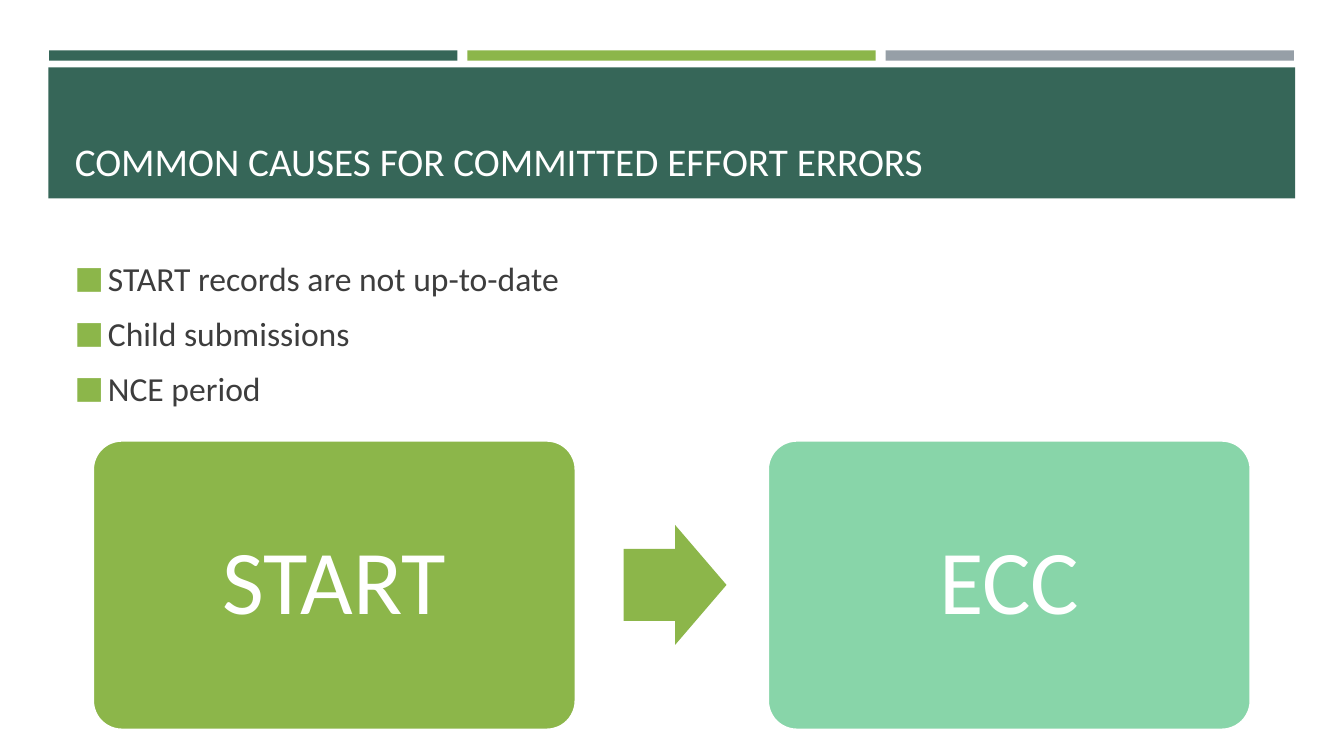
"""Build the slide on common causes for committed effort errors."""
from dataclasses import dataclass

from lxml.etree import SubElement
from pptx import Presentation
from pptx.dml.color import RGBColor
from pptx.enum.shapes import MSO_SHAPE
from pptx.enum.text import MSO_ANCHOR, MSO_AUTO_SIZE, PP_ALIGN
from pptx.oxml.ns import qn
from pptx.slide import Slide
from pptx.text.text import Font, _Paragraph
from pptx.util import Cm, Pt

DARK_GREEN = RGBColor(0x36, 0x66, 0x58)
LEAF_GREEN = RGBColor(0x8C, 0xB6, 0x4A)
MINT = RGBColor(0x88, 0xD5, 0xA9)
GRAY = RGBColor(0x96, 0x9F, 0xA7)
TEXT_GRAY = RGBColor(0x3D, 0x3D, 0x3D)
WHITE = RGBColor(0xFF, 0xFF, 0xFF)

FONT_NAME = "Calibri"
CAUSES = ["START records are not up-to-date", "Child submissions", "NCE period"]
BAR_COLORS = [DARK_GREEN, LEAF_GREEN, GRAY]
BAR_LEFT, BAR_PITCH = 1.24, 10.54


@dataclass(frozen=True)
class Block:
    """A filled shape, measured in centimetres, with an optional label."""

    left: float
    top: float
    width: float
    height: float
    fill: RGBColor
    kind: MSO_SHAPE = MSO_SHAPE.RECTANGLE
    adjustments: tuple[float, ...] = ()
    label: str = ""


BARS = [
    Block(BAR_LEFT + index * BAR_PITCH, 1.27, 10.29, 0.26, color)
    for index, color in enumerate(BAR_COLORS)
]
BAND = Block(1.22, 1.7, 31.42, 3.3, DARK_GREEN)
CARDS = [
    Block(left, 11.1, 12.17, 7.29, color, MSO_SHAPE.ROUNDED_RECTANGLE, (0.1,), label)
    for left, color, label in [(2.34, LEAF_GREEN, "START"), (19.35, MINT, "ECC")]
]
ARROW = Block(15.72, 13.23, 2.59, 3.02, LEAF_GREEN, MSO_SHAPE.RIGHT_ARROW, (0.6, 0.5))


def style_font(font: Font, size: float, color: RGBColor) -> None:
    """Set the typeface, size and colour of a font."""
    font.name = FONT_NAME
    font.size = Pt(size)
    font.color.rgb = color


def add_block(slide: Slide, block: Block) -> None:
    """Draw one filled shape with its label."""
    shape = slide.shapes.add_shape(
        block.kind, Cm(block.left), Cm(block.top), Cm(block.width), Cm(block.height)
    )
    shape.shadow.inherit = False
    shape.fill.solid()
    shape.fill.fore_color.rgb = block.fill
    shape.line.fill.background()
    for index, value in enumerate(block.adjustments):
        shape.adjustments[index] = value
    if block.label:
        shape.line.color.rgb = WHITE
        shape.line.width = Pt(1.75)
        shape.text_frame.text = block.label
        shape.text_frame.vertical_anchor = MSO_ANCHOR.MIDDLE
        paragraph = shape.text_frame.paragraphs[0]
        paragraph.alignment = PP_ALIGN.CENTER
        paragraph.line_spacing = 0.9
        style_font(paragraph.runs[0].font, 65, WHITE)


def add_bullet(paragraph: _Paragraph) -> None:
    """Give a paragraph a hanging square bullet."""
    properties = paragraph._p.get_or_add_pPr()
    properties.set("marL", str(Cm(0.84)))
    properties.set("indent", str(-Cm(0.84)))
    bullet_color = SubElement(properties, qn("a:buClr"))
    SubElement(bullet_color, qn("a:srgbClr"), val=str(LEAF_GREEN))
    SubElement(properties, qn("a:buSzPct"), val="92000")
    SubElement(properties, qn("a:buFont"), typeface=FONT_NAME)
    SubElement(properties, qn("a:buChar"), char="■")


def place_title(slide: Slide) -> None:
    """Write the title in front of the band."""
    title = slide.shapes.title
    title.left, title.top, title.width, title.height = Cm(1.63), Cm(1.96), Cm(30.63), Cm(2.82)
    text_frame = title.text_frame
    text_frame.text = "COMMON CAUSES FOR COMMITTED EFFORT ERRORS"
    text_frame.vertical_anchor = MSO_ANCHOR.BOTTOM
    text_frame.auto_size = MSO_AUTO_SIZE.NONE
    paragraph = text_frame.paragraphs[0]
    paragraph.alignment = PP_ALIGN.LEFT
    style_font(paragraph.runs[0].font, 28, WHITE)
    title.element.getparent().append(title.element)


def add_causes(slide: Slide) -> None:
    """List the causes as bullets."""
    text_box = slide.shapes.add_textbox(Cm(1.63), Cm(6.05), Cm(30.63), Cm(4.8))
    text_frame = text_box.text_frame
    text_frame.word_wrap = True
    text_frame.margin_top = Cm(0.45)
    text_frame.text = "\n".join(CAUSES)
    for index, paragraph in enumerate(text_frame.paragraphs):
        add_bullet(paragraph)
        paragraph.space_before = Pt(4.5 if index else 0)
        paragraph.space_after = Pt(6)
        style_font(paragraph.runs[0].font, 24, TEXT_GRAY)


def main() -> None:
    """Build and save the presentation."""
    presentation = Presentation()
    presentation.slide_width, presentation.slide_height = Cm(33.87), Cm(19.05)
    slide = presentation.slides.add_slide(presentation.slide_layouts[5])
    for block in [*BARS, BAND]:
        add_block(slide, block)
    place_title(slide)
    add_causes(slide)
    for block in [*CARDS, ARROW]:
        add_block(slide, block)
    presentation.save("out.pptx")


if __name__ == "__main__":
    main()
